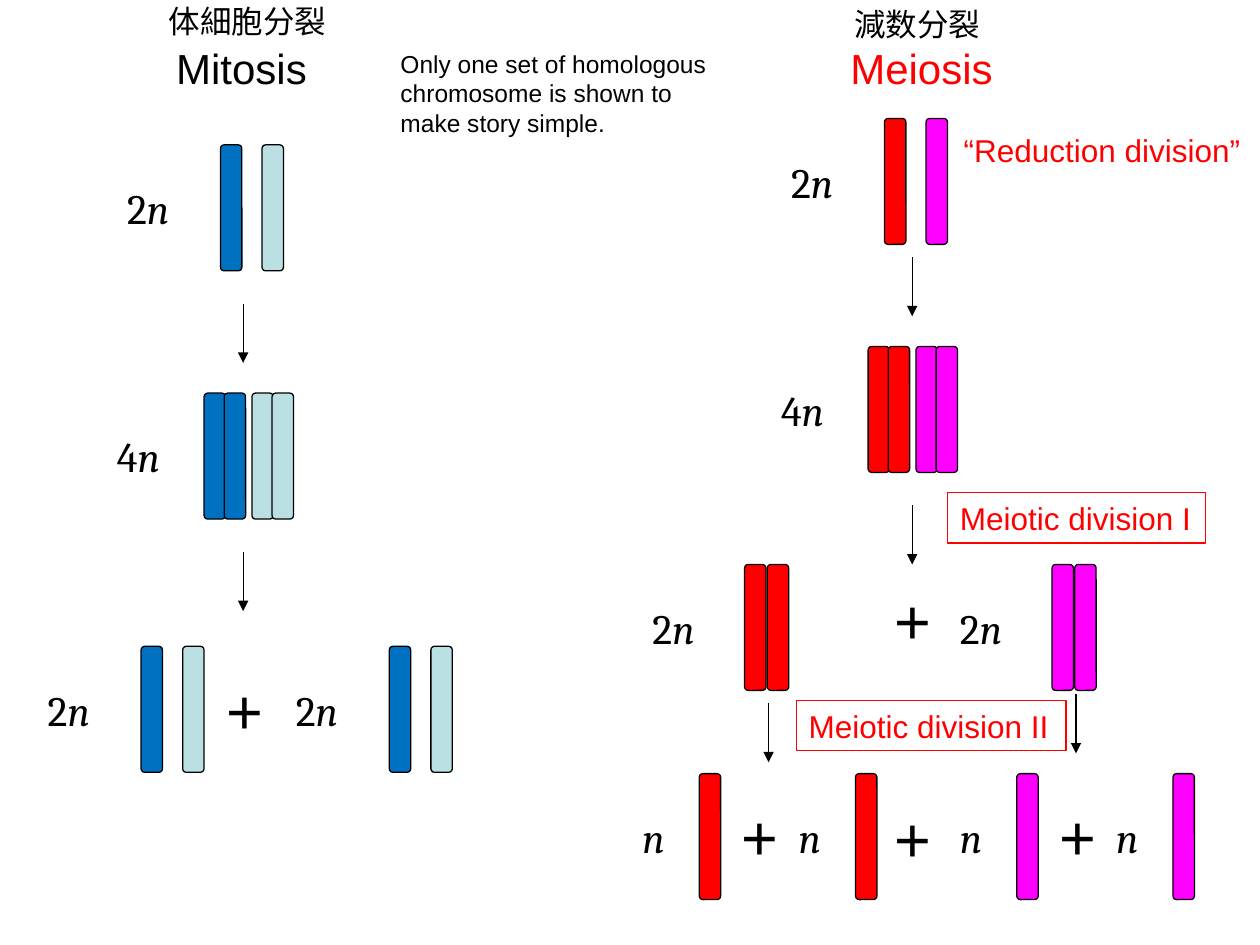
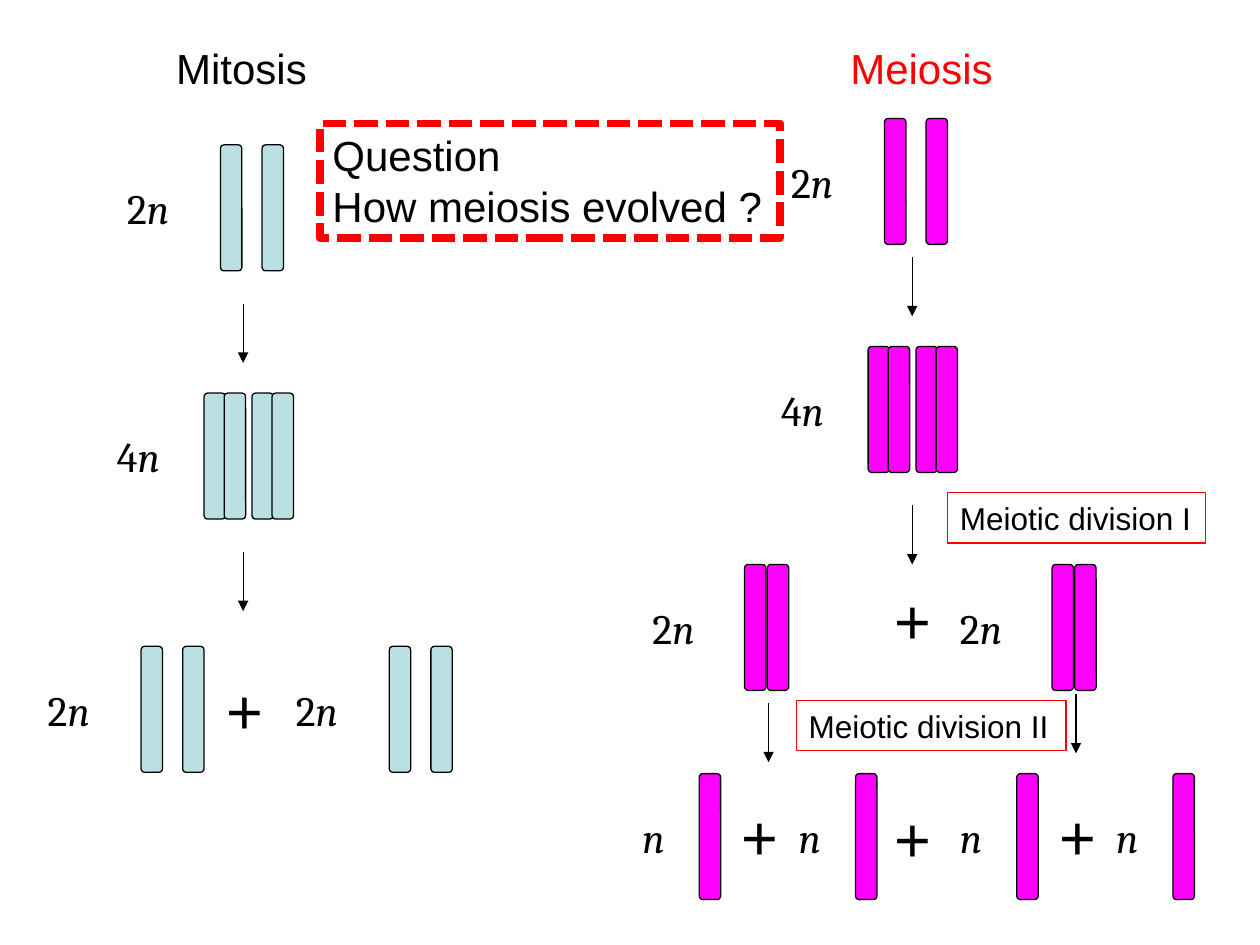
import pptx
import pptx.util
import pptx.dml.color
import pptx.enum.dml
import pptx.enum.shapes
import pptx.enum.text
import pptx.oxml
import pptx.oxml.ns

Inches = pptx.util.Inches
Pt = pptx.util.Pt
SHAPE = pptx.enum.shapes.MSO_SHAPE

COLORS = {
    "black": "000000",
    "white": "FFFFFF",
    "red": "FF0000",
    "blue": "0070C0",
    "pale": "BBE0E3",
    "magenta": "FF00FF",
}
CHROMOSOME_W, CHROMOSOME_H = 0.17, 1
ARROW_LENGTH = 0.47
TOP = 0.29
MITOSIS_LEFT, MEIOSIS_LEFT = 0.28, 5

# Left edges of the chromosomes of a cell, from the left of its label
PAIR = (0.84, 1.17)
REPLICATED_PAIR = (0.79, 0.95, 1.17, 1.33)
REPLICATED = (0.83, 1.01)
SINGLE = (0.55,)


def rgb(name):
    return pptx.dml.color.RGBColor.from_string(COLORS[name])


def set_line(line, color="black", width=0.75):
    line.color.rgb = rgb(color)
    line.width = Pt(width)


def add_text(shapes, box, text, size=18, color="black", font="Arial",
             wrap=False, italic_last=False, fill=None, border=None, border_width=0.75):
    """Add a text box; italic_last sets the last character in italics."""
    sp = shapes.add_textbox(*map(Inches, box))
    if fill:
        sp.fill.solid()
        sp.fill.fore_color.rgb = rgb(fill)
    if border:
        set_line(sp.line, border, border_width)
    tf = sp.text_frame
    tf.word_wrap = wrap
    tf.auto_size = pptx.enum.text.MSO_AUTO_SIZE.SHAPE_TO_FIT_TEXT
    for i, line in enumerate(text.split("\n")):
        p = tf.add_paragraph() if i else tf.paragraphs[0]
        runs = [(line[:-1], False), (line[-1], True)] if italic_last else [(line, False)]
        for content, italic in runs:
            if not content:
                continue
            r = p.add_run()
            r.text = content
            r.font.name = font
            r.font.size = Pt(size)
            r.font.italic = italic
            r.font.color.rgb = rgb(color)
    return sp


def add_chromosome(shapes, x, y, color):
    sp = shapes.add_shape(SHAPE.ROUNDED_RECTANGLE, Inches(x), Inches(y),
                          Inches(CHROMOSOME_W), Inches(CHROMOSOME_H))
    sp.shadow.inherit = False
    sp.fill.solid()
    sp.fill.fore_color.rgb = rgb(color)
    set_line(sp.line)


def add_cell(s, x, y, ploidy, offsets, colors):
    """Group a ploidy label with its chromosomes, sharing the colours out from the left."""
    shapes = s.shapes.add_group_shape().shapes
    add_text(shapes, (x, y + 0.25, 0.81, 0.5), ploidy, size=24, font="Cambria",
             wrap=True, italic_last=True)
    for i, offset in enumerate(offsets):
        color = colors[i * len(colors) // len(offsets)]
        add_chromosome(shapes, x + offset, y, color)


def add_plus(s, x, y):
    add_text(s.shapes, (x, y, 0.49, 0.7), "+", size=36)


def add_down_arrow(s, x, y):
    c = s.shapes.add_connector(pptx.enum.shapes.MSO_CONNECTOR.STRAIGHT, Inches(x), Inches(y),
                               Inches(x), Inches(y + ARROW_LENGTH))
    set_line(c.line)
    ln = c.line._get_or_add_ln()
    ln.append(pptx.oxml.parse_xml(
        f'<a:tailEnd {pptx.oxml.ns.nsdecls("a")} type="triangle"/>'))
    c._element.spPr.append(pptx.oxml.parse_xml(
        f'<a:effectLst {pptx.oxml.ns.nsdecls("a")}/>'))


def mitosis(s, left, top, colors):
    add_text(s.shapes, (left + 1.02, top, 1.24, 0.5), "Mitosis", size=24)
    add_cell(s, left + 0.63, top + 0.86, "2n", PAIR, colors)
    add_cell(s, left + 0.55, top + 2.83, "4n", REPLICATED_PAIR, colors)
    for x in (0, 1.97):
        add_cell(s, left + x, top + 4.84, "2n", PAIR, colors)
    add_plus(s, left + 1.42, top + 4.99)
    for y in (2.12, 4.09):
        add_down_arrow(s, left + 1.65, top + y)


def meiosis(s, left, top, colors, tag_color):
    add_text(s.shapes, (left + 1.65, top, 1.33, 0.5), "Meiosis", size=24, color="red")
    add_cell(s, left + 1.18, top + 0.65, "2n", PAIR, colors)
    add_cell(s, left + 1.1, top + 2.46, "4n", REPLICATED_PAIR, colors)
    for x, color in zip((0.08, 2.52), colors):
        add_cell(s, left + x, top + 4.19, "2n", REPLICATED, [color])
    for x, color in zip((0, 2.52), colors):
        for step in (0, 1.24):
            add_cell(s, left + x + step, top + 5.85, "n", SINGLE, [color])
    for x, y in ((2, 4.28), (0.79, 5.99), (2, 6.01), (3.31, 5.99)):
        add_plus(s, left + x, top + y)
    for x, y in ((2.24, 1.75), (2.24, 3.72), (1.1, 5.29), (3.54, 5.22)):
        add_down_arrow(s, left + x, top + y)
    for x, y, w, tag in ((2.52, 3.62, 2.05, "Meiotic division I"),
                         (1.32, 5.27, 2.14, "Meiotic division II")):
        add_text(s.shapes, (left + x, top + y, w, 0.4), tag, color=tag_color, border="red")


def comparison_slide(prs, mitosis_colors, meiosis_colors, tag_color):
    s = prs.slides.add_slide(prs.slide_layouts[6])
    mitosis(s, MITOSIS_LEFT, TOP, mitosis_colors)
    meiosis(s, MEIOSIS_LEFT, TOP, meiosis_colors, tag_color)
    return s


def add_notes_on_division(s):
    add_text(s.shapes, (3.08, 0.34, 2.76, 0.81),
             "Only one set of homologous chromosome is shown to make story simple.",
             size=14, wrap=True)
    add_text(s.shapes, (7.55, 0.99, 2.42, 0.4), "“Reduction division”", color="red")
    add_text(s.shapes, (1.24, -0.03, 1.46, 0.4), "体細胞分裂")
    add_text(s.shapes, (6.68, -0.01, 1.21, 0.4), "減数分裂")


def add_question(s):
    sp = add_text(s.shapes, (2.54, 0.98, 3.65, 0.91), "Question\nHow meiosis evolved ?",
                  size=24, fill="white", border="red", border_width=4.5)
    sp.line.dash_style = pptx.enum.dml.MSO_LINE.SQUARE_DOT


def main():
    prs = pptx.Presentation()
    prs.slide_width, prs.slide_height = Inches(10), Inches(7.5)
    add_notes_on_division(
        comparison_slide(prs, ("blue", "pale"), ("red", "magenta"), "red"))
    add_question(
        comparison_slide(prs, ("pale", "pale"), ("magenta", "magenta"), "black"))
    prs.save("out.pptx")


if __name__ == "__main__":
    main()
